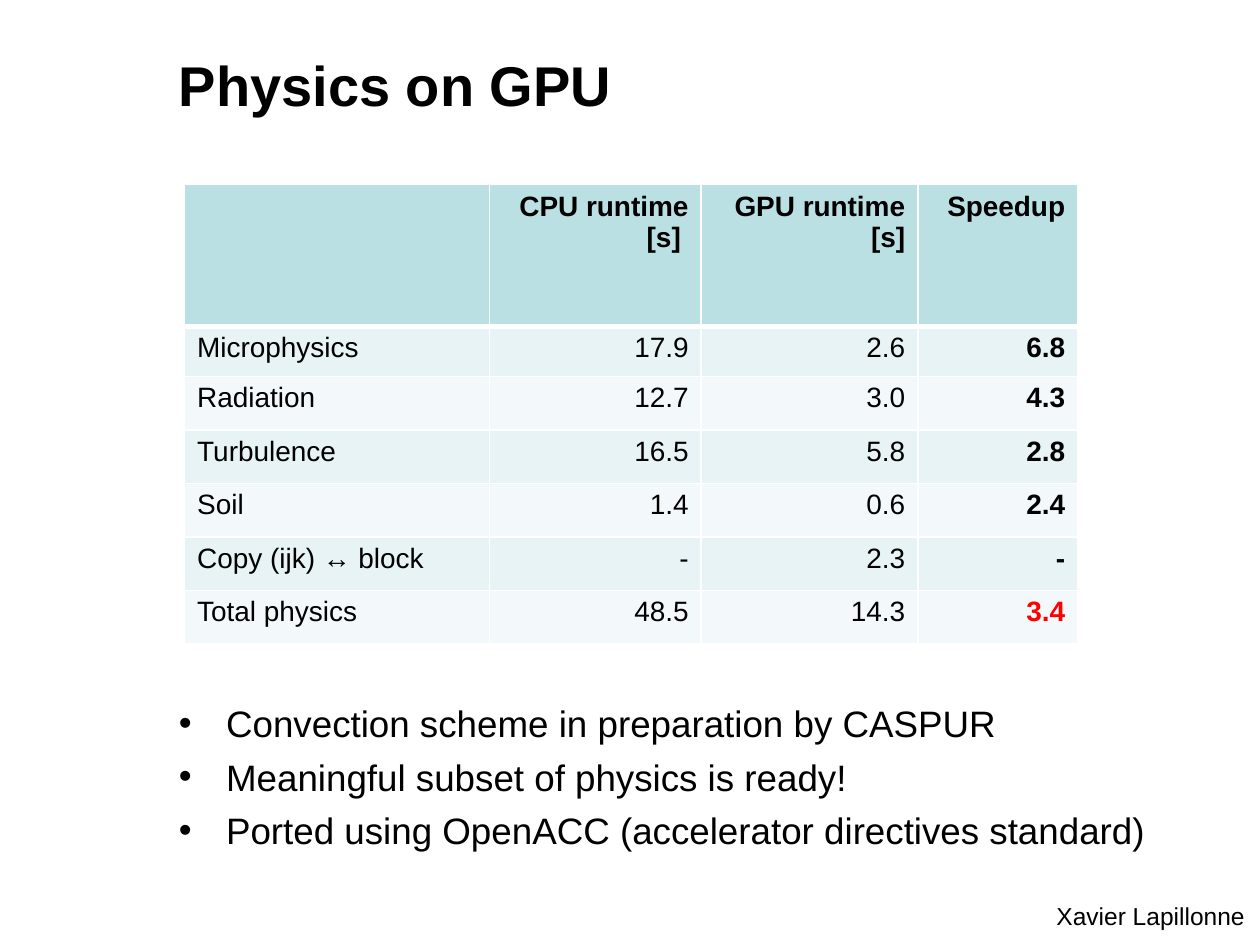
from dataclasses import dataclass

from lxml import etree
from pptx import Presentation
from pptx.dml.color import RGBColor
from pptx.enum.text import PP_ALIGN
from pptx.oxml.ns import qn
from pptx.util import Pt

LEFT, RIGHT = PP_ALIGN.LEFT, PP_ALIGN.RIGHT


@dataclass(frozen=True)
class Theme:
    font: str = "Arial"
    text: str = "000000"
    accent: str = "FF0000"
    border: str = "FFFFFF"
    header_fill: str = "BBE0E3"
    odd_fill: str = "E7F3F4"
    even_fill: str = "F3F9FA"
    title_size: float = 32
    bullet_size: float = 21
    table_size: float = 16
    author_size: float = 14


THEME = Theme()
COLUMN_WIDTHS = (174.2, 121, 123.8, 91.4)
ROW_HEIGHTS = (81, 28.6) + (30.6,) * 5
RUNTIMES = (
    ("", "CPU runtime\n[s] ", "GPU runtime\n [s]", "Speedup"),
    ("Microphysics", "17.9", "2.6", "6.8"),
    ("Radiation", "12.7", "3.0", "4.3"),
    ("Turbulence", "16.5", "5.8", "2.8"),
    ("Soil", "1.4", "0.6", "2.4"),
    ("Copy (ijk) ↔ block", "-", "2.3", "-"),
    ("Total physics", "48.5", "14.3", "3.4"),
)
REMARKS = (
    "Convection scheme in preparation by CASPUR",
    "Meaningful subset of physics is ready!",
    "Ported using OpenACC (accelerator directives standard)",
)


def style(paragraph, size, bold=False, color=THEME.text, align=LEFT):
    paragraph.alignment = align
    font = paragraph.font
    font.name, font.size, font.bold = THEME.font, Pt(size), bold
    font.color.rgb = RGBColor.from_string(color)


def add_text(slide, left, top, width, height, text, inset=True, wrap=True):
    """Add an unstyled text box and return its paragraphs."""
    box = slide.shapes.add_textbox(Pt(left), Pt(top), Pt(width), Pt(height))
    frame = box.text_frame
    frame.word_wrap = wrap
    if not inset:
        frame.margin_left = frame.margin_right = 0
        frame.margin_top = frame.margin_bottom = 0
    frame.text = text
    return frame.paragraphs


def add_bullet(paragraph, indent):
    properties = paragraph._p.get_or_add_pPr()
    properties.set("marL", str(Pt(indent)))
    properties.set("indent", str(-Pt(indent)))
    etree.SubElement(properties, qn("a:buFont"), typeface=THEME.font)
    etree.SubElement(properties, qn("a:buChar"), char="•")


def add_remarks(slide):
    remarks = add_text(slide, 102.2, 400.6, 588.2, 79, "\n".join(REMARKS), inset=False)
    for index, remark in enumerate(remarks):
        add_bullet(remark, 27)
        style(remark, THEME.bullet_size)
        if index:
            remark.space_before = Pt(5.25)


def set_border(cell, side, width):
    line = etree.SubElement(cell._tc.get_or_add_tcPr(), qn(f"a:ln{side}"), w=str(Pt(width)))
    fill = etree.SubElement(line, qn("a:solidFill"))
    etree.SubElement(fill, qn("a:srgbClr"), val=THEME.border)


def fill_cell(cell, text, row, column):
    is_header, is_speedup = row == 0, column == len(COLUMN_WIDTHS) - 1
    is_total_speedup = is_speedup and row == len(RUNTIMES) - 1
    widths = {"L": 1, "R": 1, "T": 3 if row == 1 else 1, "B": 3 if is_header else 1}
    for side, width in widths.items():
        set_border(cell, side, width)
    band = THEME.odd_fill if row % 2 else THEME.even_fill
    cell.fill.solid()
    cell.fill.fore_color.rgb = RGBColor.from_string(THEME.header_fill if is_header else band)
    cell.text = text
    for paragraph in cell.text_frame.paragraphs:
        style(
            paragraph,
            THEME.table_size,
            bold=is_header or is_speedup,
            color=THEME.accent if is_total_speedup else THEME.text,
            align=RIGHT if column else LEFT,
        )


def add_runtime_table(slide):
    table = slide.shapes.add_table(
        len(RUNTIMES), len(COLUMN_WIDTHS), Pt(105.5), Pt(105.5),
        Pt(sum(COLUMN_WIDTHS)), Pt(sum(ROW_HEIGHTS)),
    ).table
    for column, width in zip(table.columns, COLUMN_WIDTHS):
        column.width = Pt(width)
    for row, height in zip(table.rows, ROW_HEIGHTS):
        row.height = Pt(height)
    for row, values in enumerate(RUNTIMES):
        for column, value in enumerate(values):
            fill_cell(table.cell(row, column), value, row, column)


def main():
    presentation = Presentation()
    presentation.slide_width, presentation.slide_height = Pt(720), Pt(540)
    slide = presentation.slides.add_slide(presentation.slide_layouts[6])

    title = add_text(slide, 102.2, 28.9, 587.5, 74, "Physics on GPU", inset=False)
    style(title[0], THEME.title_size, bold=True)
    add_runtime_table(slide)
    add_remarks(slide)
    author = add_text(slide, 595.4, 511.2, 123.1, 24.5, "Xavier Lapillonne", wrap=False)
    style(author[0], THEME.author_size, align=RIGHT)

    presentation.save("out.pptx")


if __name__ == "__main__":
    main()
